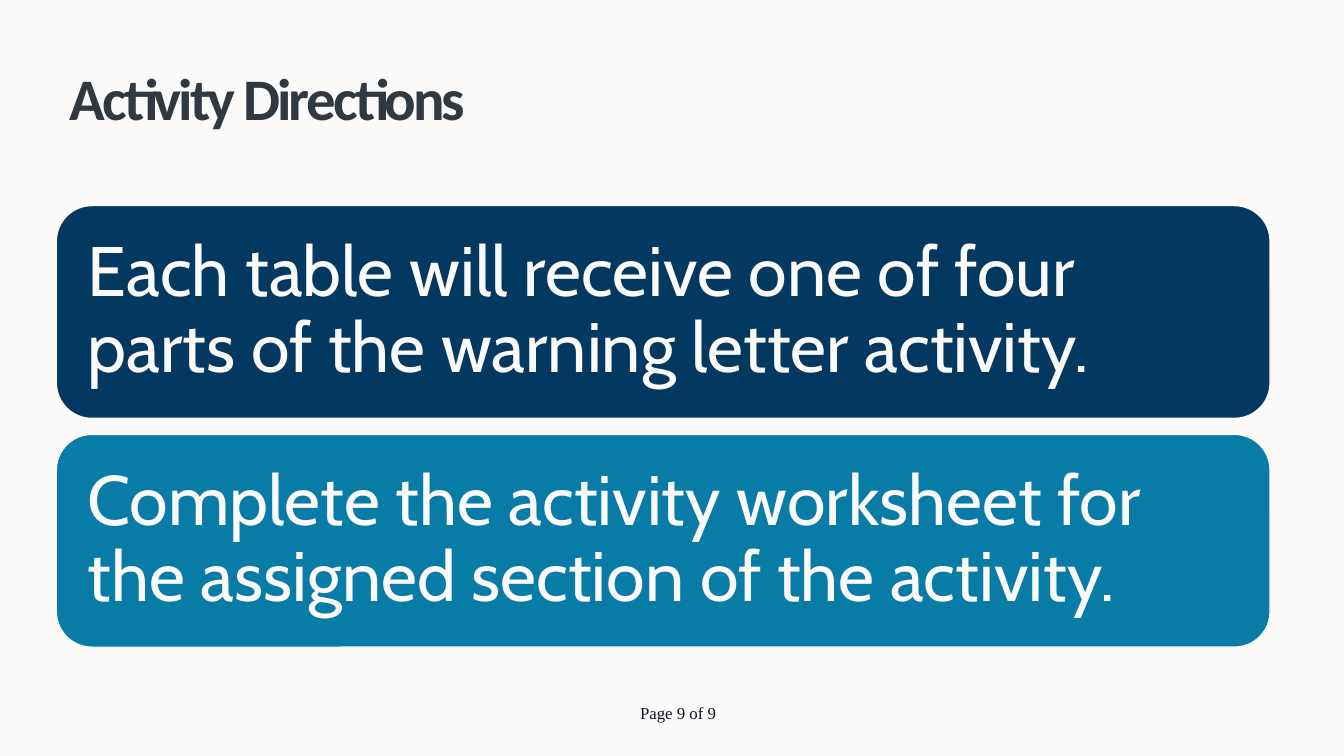
from dataclasses import dataclass

from pptx import Presentation
from pptx.dml.color import RGBColor
from pptx.enum.shapes import MSO_SHAPE
from pptx.enum.text import MSO_ANCHOR, MSO_AUTO_SIZE, PP_ALIGN
from pptx.shapes.autoshape import Shape
from pptx.slide import Slide
from pptx.util import Pt

PAPER = RGBColor(0xFB, 0xFA, 0xF8)
CHARCOAL = RGBColor(0x32, 0x38, 0x3F)
NAVY = RGBColor(0x03, 0x38, 0x60)
TEAL = RGBColor(0x08, 0x7C, 0xA7)
INK = RGBColor(0x0A, 0x12, 0x2A)

LEFT, WIDTH = 40.3, 866.9
PANEL_TOP, PANEL_HEIGHT, PANEL_GAP = 146.9, 151.9, 11.5


@dataclass(frozen=True)
class Direction:
    text: str
    color: RGBColor


DIRECTIONS = [
    Direction("Each table will receive one of four parts of the warning letter activity.", NAVY),
    Direction("Complete the activity worksheet for the assigned section of the activity.", TEAL),
]


def write(shape: Shape, text: str, *, font: str, size: float, color: RGBColor,
          insets: tuple[float, float, float, float], bold: bool = False,
          anchor: MSO_ANCHOR = MSO_ANCHOR.MIDDLE, spacing: float | Pt = 1.0,
          tracking: float = 0) -> None:
    """Fill a shape with one formatted paragraph; insets run left, top, right, bottom."""
    frame = shape.text_frame
    frame.word_wrap = True
    frame.auto_size = MSO_AUTO_SIZE.NONE
    frame.vertical_anchor = anchor
    (frame.margin_left, frame.margin_top,
     frame.margin_right, frame.margin_bottom) = map(Pt, insets)
    paragraph = frame.paragraphs[0]
    paragraph.alignment = PP_ALIGN.LEFT
    paragraph.line_spacing = spacing
    run = paragraph.add_run()
    run.text = text
    run.font.name = font
    run.font.size = Pt(size)
    run.font.bold = bold
    run.font.color.rgb = color
    if tracking:
        run.font._element.set("spc", str(round(tracking * 100)))


def add_panel(slide: Slide, direction: Direction, top: float) -> None:
    panel = slide.shapes.add_shape(
        MSO_SHAPE.ROUNDED_RECTANGLE, Pt(LEFT), Pt(top), Pt(WIDTH), Pt(PANEL_HEIGHT))
    panel.shadow.inherit = False
    panel.fill.solid()
    panel.fill.fore_color.rgb = direction.color
    panel.line.color.rgb = PAPER
    panel.line.width = Pt(0.85)
    write(panel, direction.text, font="Cabin", size=50, color=PAPER,
          insets=(15, 15, 15, 15), spacing=0.9)


def main() -> None:
    deck = Presentation()
    deck.slide_width, deck.slide_height = Pt(960), Pt(540)
    slide = deck.slides.add_slide(deck.slide_layouts[5])
    slide.background.fill.solid()
    slide.background.fill.fore_color.rgb = PAPER

    # Title
    heading = slide.shapes.title
    heading.left, heading.top = Pt(LEFT), Pt(24.5)
    heading.width, heading.height = Pt(WIDTH), Pt(90)
    write(heading, "Activity Directions", font="Calibri", size=42, color=CHARCOAL,
          bold=True, insets=(9.4, 5, 9.4, 5), tracking=-2)

    # Direction panels
    for index, direction in enumerate(DIRECTIONS):
        add_panel(slide, direction, PANEL_TOP + index * (PANEL_HEIGHT + PANEL_GAP))

    # Page number
    page_label = slide.shapes.add_textbox(Pt(366.5), Pt(502.6), Pt(188.6), Pt(20.2))
    write(page_label, "Page 9 of 9", font="Times New Roman", size=12, color=INK,
          insets=(90.7, 0.7, 0, 0), anchor=MSO_ANCHOR.TOP, spacing=Pt(13.2))

    deck.save("out.pptx")


if __name__ == "__main__":
    main()
